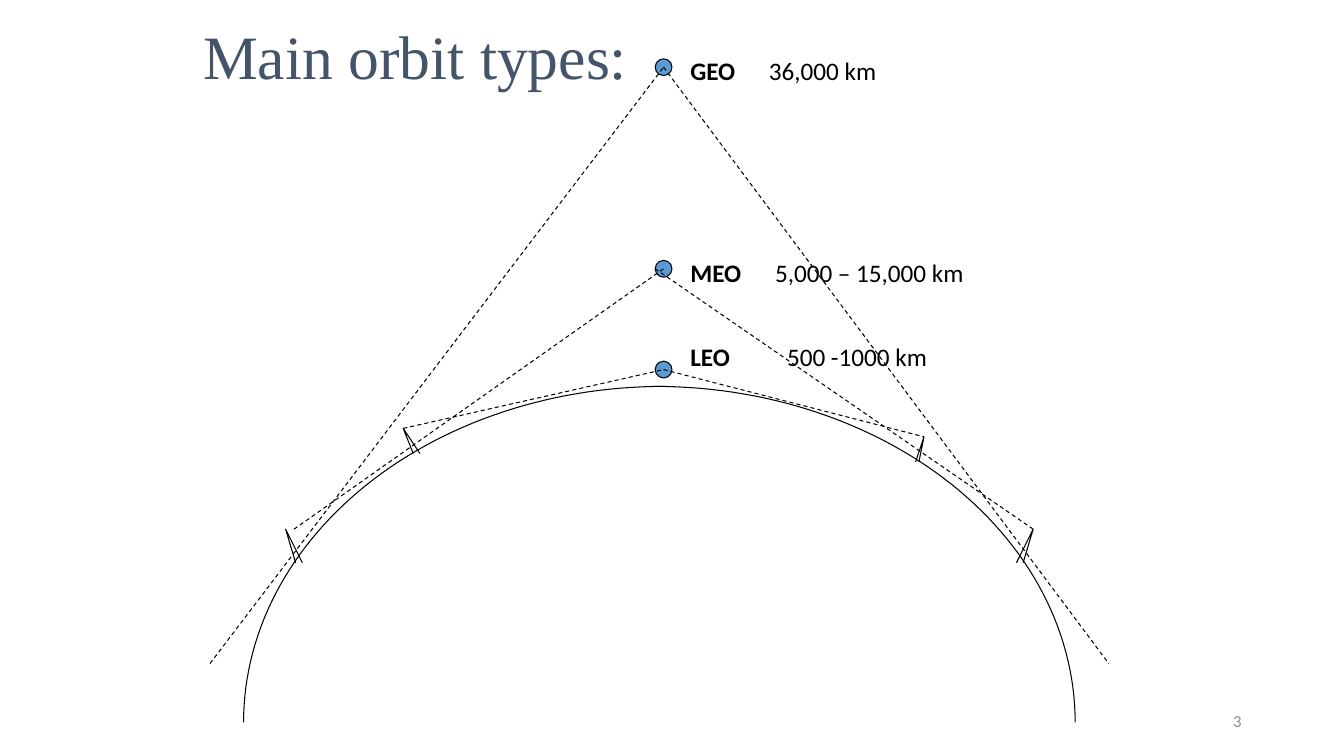
import math
import lxml.etree
import pptx
import pptx.dml.color
import pptx.enum.dml
import pptx.enum.shapes
import pptx.enum.text
import pptx.oxml.ns
import pptx.util

COLORS = {"ink": "000000", "satellite": "5B9BD5", "title": "44546A", "number": "8C8C8C"}
COLUMNS, ROWS = 160, 90
CELL = pptx.util.Inches(1) / 12
EARTH_TOP, EARTH_WIDTH, EARTH_HEIGHT = 46, 50, 40
AXIS = 79

ORBITS = [
    ("GEO", "36,000 km", 8, 6, 40, 0.78),
    ("MEO", "5,000 – 15,000 km", 32, 30, 44, 0.84),
    ("LEO", "500 -1000 km", 44, 40, 41, 0.96),
]
BEAMS = [
    ((48, 51), (79, 44)),
    ((79, 44), (110, 52)),
    ((25, 79), (79, 8)),
    ((35, 63), (79, 32)),
    ((79, 8), (132, 79)),
    ((123, 63), (78, 32)),
]
ANTENNAS = [(48, 51, 2, 3), (110, 52, -1, 3), (34, 63, 2, 4), (123, 63, -2, 4)]


def grid(*cells):
    return [pptx.util.Emu(round(cell * CELL)) for cell in cells]


def rgb(name):
    return pptx.dml.color.RGBColor.from_string(COLORS[name])


def style_line(line):
    line.color.rgb = rgb("ink")
    line.width = pptx.util.Pt(0.75)


def add_text(page, area, pieces, size, font_name, color, align="LEFT", anchor="MIDDLE", tab=None):
    frame = page.shapes.add_textbox(*grid(*area)).text_frame
    frame.word_wrap = True
    frame.vertical_anchor = getattr(pptx.enum.text.MSO_ANCHOR, anchor)
    para = frame.paragraphs[0]
    para.alignment = getattr(pptx.enum.text.PP_ALIGN, align)
    if tab:
        tag = pptx.oxml.ns.qn
        stops = lxml.etree.SubElement(para._p.get_or_add_pPr(), tag("a:tabLst"))
        position = str(pptx.util.Inches(tab))
        lxml.etree.SubElement(stops, tag("a:tab"), pos=position, algn="l")
    para.font.size = pptx.util.Pt(size)
    para.font.name = font_name
    para.font.color.rgb = rgb(color)
    for text, bold in pieces:
        span = para.add_run()
        span.text = text
        span.font.bold = bold


def add_outline(page, points):
    start, *rest = [grid(*point) for point in points]
    builder = page.shapes.build_freeform(*start, scale=1.0)
    builder.add_line_segments(rest, close=False)
    shape = builder.convert_to_shape()
    shape.shadow.inherit = False
    shape.fill.background()
    style_line(shape.line)


def add_antenna(page, x, y, width, height):
    foot = y + height
    add_outline(page, [(x + 0.6 * width, foot), (x, y), (x + width, foot)])


def add_horizon(page, center, direction):
    steps = 60
    angles = [math.pi / 2 * step / steps for step in range(steps + 1)]
    add_outline(page, [
        (center + direction * EARTH_WIDTH * math.sin(angle),
         EARTH_TOP + EARTH_HEIGHT * (1 - math.cos(angle)))
        for angle in angles
    ])


def add_beam(page, start, end):
    kind = pptx.enum.shapes.MSO_CONNECTOR.STRAIGHT
    beam = page.shapes.add_connector(kind, *grid(*start, *end))
    style_line(beam.line)
    beam.line.dash_style = pptx.enum.dml.MSO_LINE.DASH
    lxml.etree.SubElement(beam._element.spPr, pptx.oxml.ns.qn("a:effectLst"))


def add_satellite(page, y):
    kind = pptx.enum.shapes.MSO_SHAPE.OVAL
    dot = page.shapes.add_shape(kind, *grid(AXIS - 1, y - 1, 2, 2))
    dot.shadow.inherit = False
    dot.fill.solid()
    dot.fill.fore_color.rgb = rgb("satellite")
    style_line(dot.line)


def main():
    deck = pptx.Presentation()
    deck.slide_width, deck.slide_height = grid(COLUMNS, ROWS)
    page = deck.slides.add_slide(deck.slide_layouts[6])

    add_text(page, (113, 83.4, 36, 4.8), [("3", False)], 12, "Calibri", "number", align="RIGHT")
    add_text(page, (23, 3, 102, 7), [("Main orbit types:", False)], 44, "Times New Roman", "title")

    for name, altitude, y, label_top, label_width, tab in ORBITS:
        add_satellite(page, y)
        add_text(page, (81, label_top, label_width, 4.8),
                 [(name, True), ("\t" + altitude, False)],
                 18, "Calibri", "ink", anchor="TOP", tab=tab)
    for start, end in BEAMS:
        add_beam(page, start, end)
    add_horizon(page, AXIS - 1, 1)
    add_horizon(page, AXIS, -1)
    for antenna in ANTENNAS:
        add_antenna(page, *antenna)

    deck.save("out.pptx")


if __name__ == "__main__":
    main()
